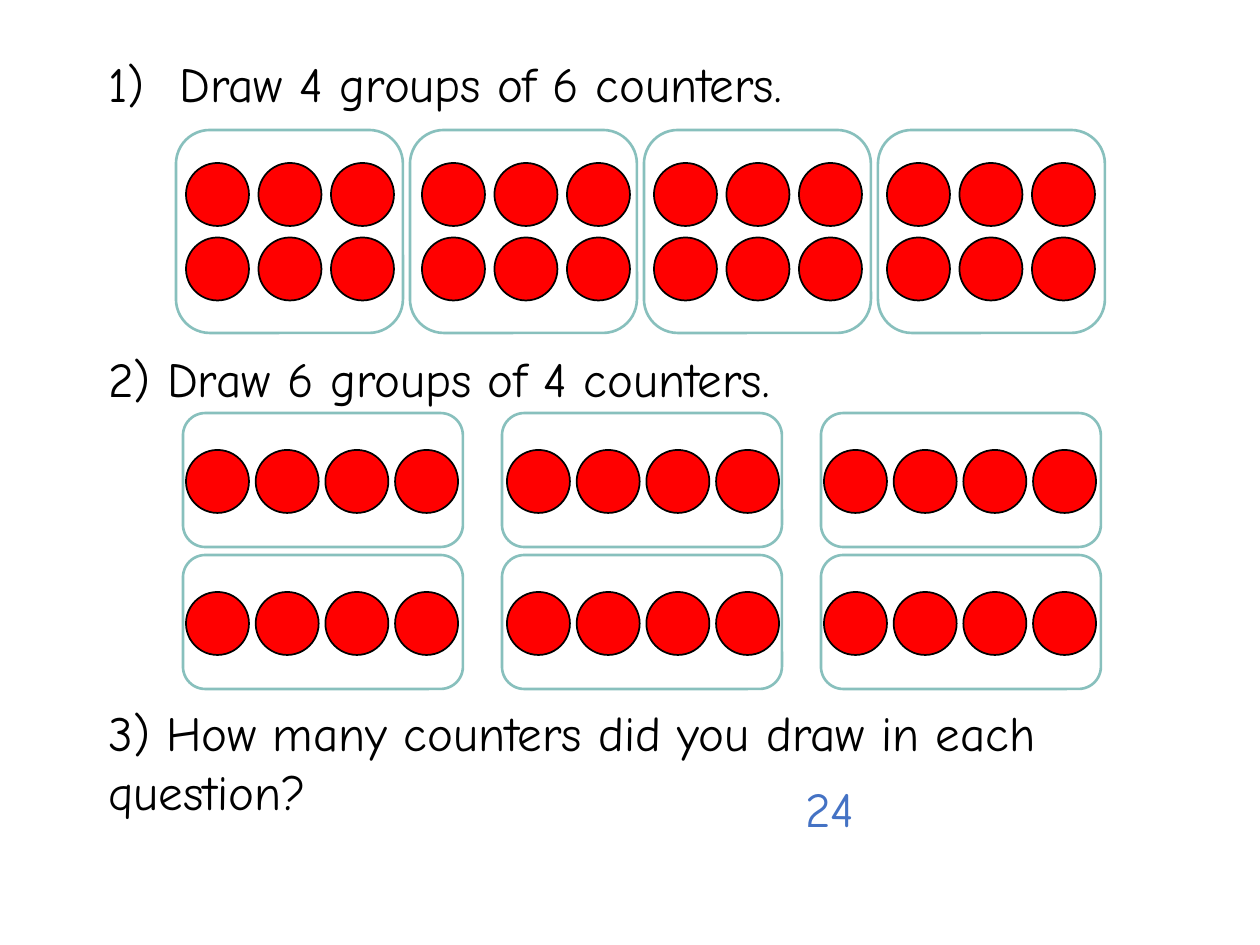
"""Build a slide of counters drawn in equal groups."""
from lxml import etree
from pptx import Presentation
from pptx import util as u
from pptx.dml.color import RGBColor
from pptx.enum import shapes, text
from pptx.oxml.ns import qn

BLACK = RGBColor(0x00, 0x00, 0x00)
RED = RGBColor(0xFF, 0x00, 0x00)
TEAL = RGBColor(0x88, 0xC0, 0xBD)
BLUE = RGBColor(0x44, 0x72, 0xC4)
FONT = "Comic Neue"
COUNTER = 63

QUESTIONS = [
    ("Draw 4 groups of 6 counters.", 0),
    ("2) Draw 6 groups of 4 counters.", 135),
    ("3) How many counters did you draw in each question?", 169),
]
ANSWER = [("24", 0)]

ARRAYS = [
    dict(left=176, pitch=234, tops=[130], size=(227, 203),
         starts=[186, 422, 654, 887], inset=33, cols=3, rows=2, step=(72.5, 74.5)),
    dict(left=183, pitch=319, tops=[413, 555], size=(280, 134),
         starts=[186, 507, 824], inset=37, cols=4, rows=1, step=(69.7, 0)),
]


def px(n):
    return u.Emu(round(n * 914400 / 126))


def add_text(s, paragraphs, x, y, w, h, color=BLACK, numbered=False):
    tf = s.shapes.add_textbox(px(x), px(y), px(w), px(h)).text_frame
    tf.word_wrap = True
    tf.auto_size = text.MSO_AUTO_SIZE.SHAPE_TO_FIT_TEXT
    for i, (line, before) in enumerate(paragraphs):
        p = tf.paragraphs[0] if i == 0 else tf.add_paragraph()
        if numbered and i == 0:
            pPr = p._p.get_or_add_pPr()
            pPr.set("marL", str(px(71)))
            pPr.set("indent", str(-px(71)))
            etree.SubElement(pPr, qn("a:buFont"), typeface="+mj-lt")
            etree.SubElement(pPr, qn("a:buAutoNum"), type="arabicParenR")
        if before:
            p.space_before = u.Pt(before)
        r = p.add_run()
        r.text = line
        r.font.name, r.font.size = FONT, u.Pt(28)
        r.font.color.rgb = color


def add_outline(s, kind, x, y, w, h, line, weight, fill=None):
    sp = s.shapes.add_shape(kind, px(x), px(y), px(w), px(h))
    sp.shadow.inherit = False
    sp.line.color.rgb = line
    sp.line.width = u.Pt(weight)
    if fill is None:
        sp.fill.background()
    else:
        sp.fill.solid()
        sp.fill.fore_color.rgb = fill


def add_array(s, left, pitch, tops, size, starts, inset, cols, rows, step):
    for top in tops:
        for i, start in enumerate(starts):
            add_outline(s, shapes.MSO_SHAPE.ROUNDED_RECTANGLE,
                        left + i * pitch, top, *size, TEAL, 1.5)
            for row in range(rows):
                for col in range(cols):
                    add_outline(s, shapes.MSO_SHAPE.OVAL,
                                start + col * step[0], top + inset + row * step[1],
                                COUNTER, COUNTER, BLACK, 1, RED)


def main():
    prs = Presentation()
    prs.slide_width, prs.slide_height = px(1260), px(945)
    s = prs.slides.add_slide(prs.slide_layouts[6])
    add_text(s, QUESTIONS, 96, 47, 1033, 785, numbered=True)
    for array in ARRAYS:
        add_array(s, **array)
    add_text(s, ANSWER, 793, 772, 112, 72, color=BLUE)
    prs.save("out.pptx")


if __name__ == "__main__":
    main()
